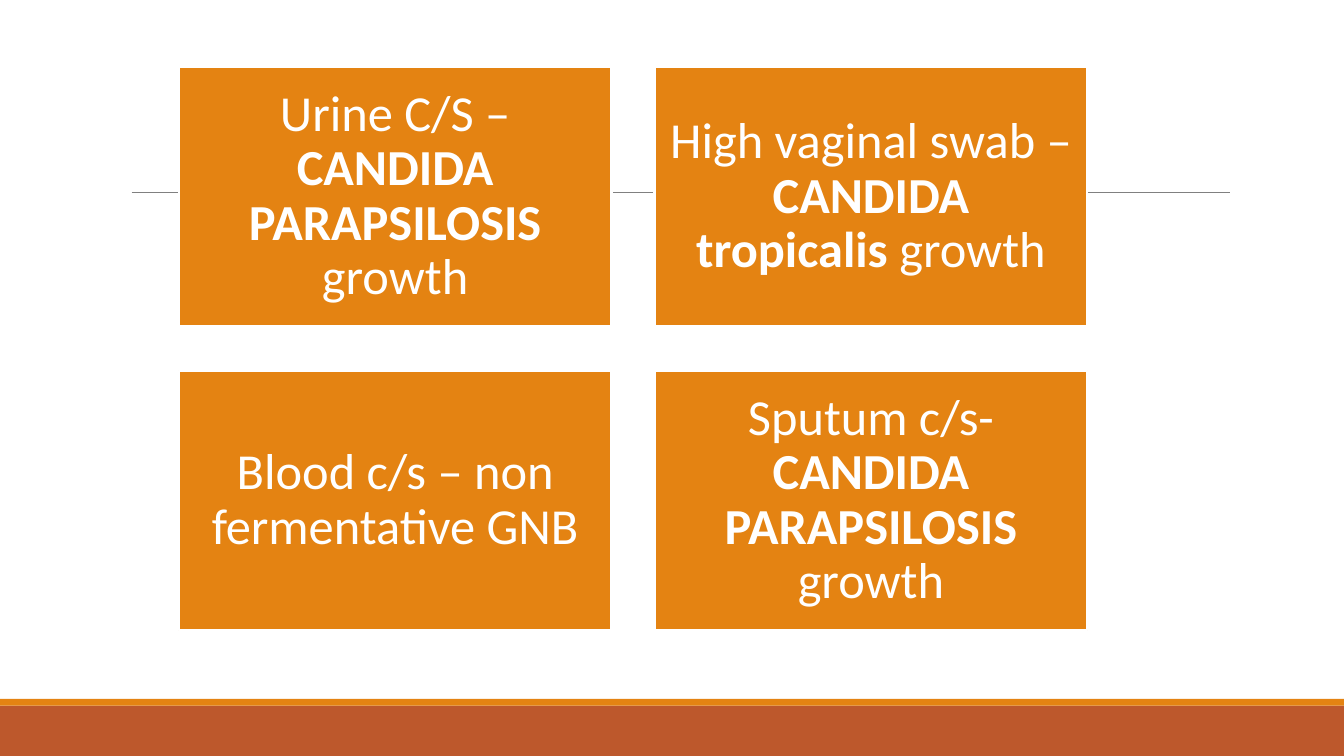
from dataclasses import dataclass

import pptx
import pptx.dml.color
import pptx.enum.shapes
import pptx.enum.text
import pptx.oxml.ns
import pptx.util
from lxml import etree

# Widescreen slide, in inches
SLIDE_WIDTH = 10
SLIDE_HEIGHT = SLIDE_WIDTH * 9 / 16
COLORS = {"orange": "E48312", "rust": "BD582C", "gray": "808080", "white": "FFFFFF"}

# Card grid, in inches
GRID_LEFT, GRID_TOP = 1.33, 0.5
CARD_WIDTH, CARD_HEIGHT = 3.22, 1.93
COLUMN_STEP, ROW_STEP = 3.54, 2.26


@dataclass(frozen=True)
class Card:
    column: int
    row: int
    specimen: str
    organism: str = ""
    ending: str = ""


CARDS = [
    Card(0, 0, "Urine C/S – ", "CANDIDA PARAPSILOSIS ", "growth"),
    Card(1, 0, "High vaginal swab – ", "CANDIDA\ntropicalis ", "growth"),
    Card(0, 1, "Blood c/s – non fermentative GNB"),
    Card(1, 1, "Sputum c/s- ", "CANDIDA PARAPSILOSIS ", "growth"),
]


def color(name: str) -> pptx.dml.color.RGBColor:
    return pptx.dml.color.RGBColor.from_string(COLORS[name])


def add_rectangle(slide, left: float, top: float, width: float, height: float, fill: str):
    shape = slide.shapes.add_shape(
        pptx.enum.shapes.MSO_SHAPE.RECTANGLE,
        *(pptx.util.Inches(length) for length in (left, top, width, height)),
    )
    shape.shadow.inherit = False
    shape.fill.solid()
    shape.fill.fore_color.rgb = color(fill)
    shape.line.fill.background()
    return shape


def add_text(paragraph, text: str, *, size: float = 27, bold: bool = False,
             font: str = "Calibri", ink: str = "white") -> None:
    for index, line in enumerate(text.split("\n")):
        if index:
            paragraph.add_line_break()
        run = paragraph.add_run()
        run.text = line
        run.font.name = font
        run.font.size = pptx.util.Pt(size)
        run.font.bold = bold
        run.font.color.rgb = color(ink)


def add_rule(slide, left: float, right: float, y: float) -> None:
    rule = slide.shapes.add_connector(
        pptx.enum.shapes.MSO_CONNECTOR.STRAIGHT,
        *(pptx.util.Inches(length) for length in (left, y, right, y)),
    )
    rule.line.color.rgb = color("gray")
    rule.line.width = pptx.util.Pt(0.5)
    etree.SubElement(rule._element.spPr, pptx.oxml.ns.qn("a:effectLst"))


def add_card(slide, card: Card) -> None:
    shape = add_rectangle(
        slide,
        GRID_LEFT + card.column * COLUMN_STEP,
        GRID_TOP + card.row * ROW_STEP,
        CARD_WIDTH, CARD_HEIGHT, "orange",
    )
    shape.line.color.rgb = color("white")
    shape.line.width = pptx.util.Pt(1.25)

    frame = shape.text_frame
    frame.word_wrap = True
    frame.vertical_anchor = pptx.enum.text.MSO_ANCHOR.MIDDLE
    for side in ("left", "top", "right", "bottom"):
        setattr(frame, f"margin_{side}", pptx.util.Inches(0.11))

    paragraph = frame.paragraphs[0]
    paragraph.alignment = pptx.enum.text.PP_ALIGN.CENTER
    paragraph.line_spacing = 0.9
    add_text(paragraph, card.specimen)
    if card.organism:
        add_text(paragraph, card.organism, bold=True)
        add_text(paragraph, card.ending)


def main() -> None:
    presentation = pptx.Presentation()
    presentation.slide_width = pptx.util.Inches(SLIDE_WIDTH)
    presentation.slide_height = pptx.util.Inches(SLIDE_HEIGHT)
    slide = presentation.slides.add_slide(presentation.slide_layouts[6])

    # Footer bands and the rule behind the cards
    add_rectangle(slide, 0, 5.25, SLIDE_WIDTH, SLIDE_HEIGHT - 5.25, "rust")
    add_rectangle(slide, 0, 5.2, SLIDE_WIDTH, 0.05, "orange")
    add_rule(slide, 0.98, 9.15, 1.43)

    # Culture results
    for card in CARDS:
        add_card(slide, card)

    presentation.save("out.pptx")


if __name__ == "__main__":
    main()
